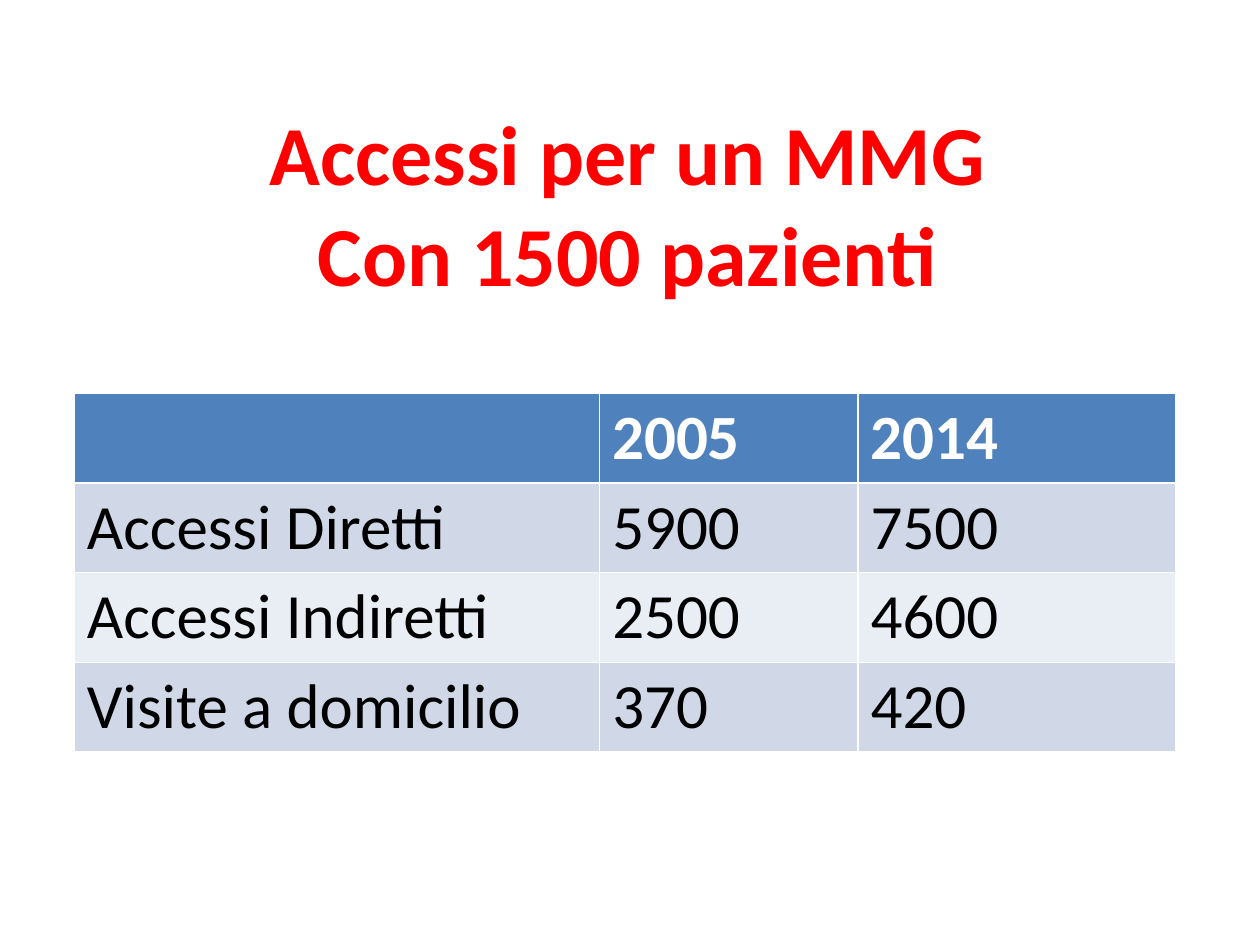
from dataclasses import dataclass
from typing import NamedTuple

from pptx import Presentation
from pptx.dml.color import RGBColor
from pptx.enum.text import PP_ALIGN
from pptx.util import Inches, Pt


@dataclass(frozen=True)
class Theme:
    font: str = "Calibri"
    title_size: int = 48
    table_size: int = 36
    title: str = "FF0000"
    header_text: str = "FFFFFF"
    body_text: str = "000000"
    header_fill: str = "4F81BD"
    band_fills: tuple = ("D0D8E8", "E9EDF4")


class Box(NamedTuple):
    left: float
    top: float
    width: float
    height: float


THEME = Theme()
SLIDE_WIDTH, SLIDE_HEIGHT = Inches(10), Inches(7.5)
GRID_COLUMNS, GRID_ROWS = 100, 75

TITLE_BOX = Box(4.8, 7.6, 90, 17.2)
TABLE_BOX = Box(5.9, 31.2, 87.4, 28.4)
COLUMN_SPANS = (41.7, 20.5, 25.2)

TITLE = ("Accessi per un MMG", "Con 1500 pazienti")
ACCESSES = (
    ("", "2005", "2014"),
    ("Accessi Diretti", "5900", "7500"),
    ("Accessi Indiretti", "2500", "4600"),
    ("Visite a domicilio", "370", "420"),
)


def across(columns):
    return round(SLIDE_WIDTH * columns / GRID_COLUMNS)


def down(rows):
    return round(SLIDE_HEIGHT * rows / GRID_ROWS)


def place(box):
    return across(box.left), down(box.top), across(box.width), down(box.height)


def write_text(para, text, *, size, color, bold=False, align=PP_ALIGN.LEFT):
    para.alignment = align
    para.font.size = Pt(size)
    if not text:
        return
    span = para.add_run()
    span.text = text
    span.font.name = THEME.font
    span.font.size = Pt(size)
    span.font.bold = bold
    span.font.color.rgb = RGBColor.from_string(color)


def add_title(page, box, lines):
    frame = page.shapes.add_textbox(*place(box)).text_frame
    frame.word_wrap = True
    for index, line in enumerate(lines):
        para = frame.add_paragraph() if index else frame.paragraphs[0]
        write_text(para, line, size=THEME.title_size, color=THEME.title,
                   bold=True, align=PP_ALIGN.CENTER)


def add_access_table(page, box, records):
    table = page.shapes.add_table(len(records), len(COLUMN_SPANS), *place(box)).table
    for column, span in zip(table.columns, COLUMN_SPANS):
        column.width = across(span)
    for row_index, record in enumerate(records):
        header = row_index == 0
        fill = THEME.header_fill if header else THEME.band_fills[(row_index - 1) % 2]
        color = THEME.header_text if header else THEME.body_text
        for column_index, text in enumerate(record):
            cell = table.cell(row_index, column_index)
            cell.fill.solid()
            cell.fill.fore_color.rgb = RGBColor.from_string(fill)
            write_text(cell.text_frame.paragraphs[0], text,
                       size=THEME.table_size, color=color, bold=header)


def main():
    deck = Presentation()
    deck.slide_width, deck.slide_height = SLIDE_WIDTH, SLIDE_HEIGHT
    page = deck.slides.add_slide(deck.slide_layouts[6])
    add_access_table(page, TABLE_BOX, ACCESSES)
    add_title(page, TITLE_BOX, TITLE)
    deck.save("out.pptx")


if __name__ == "__main__":
    main()
